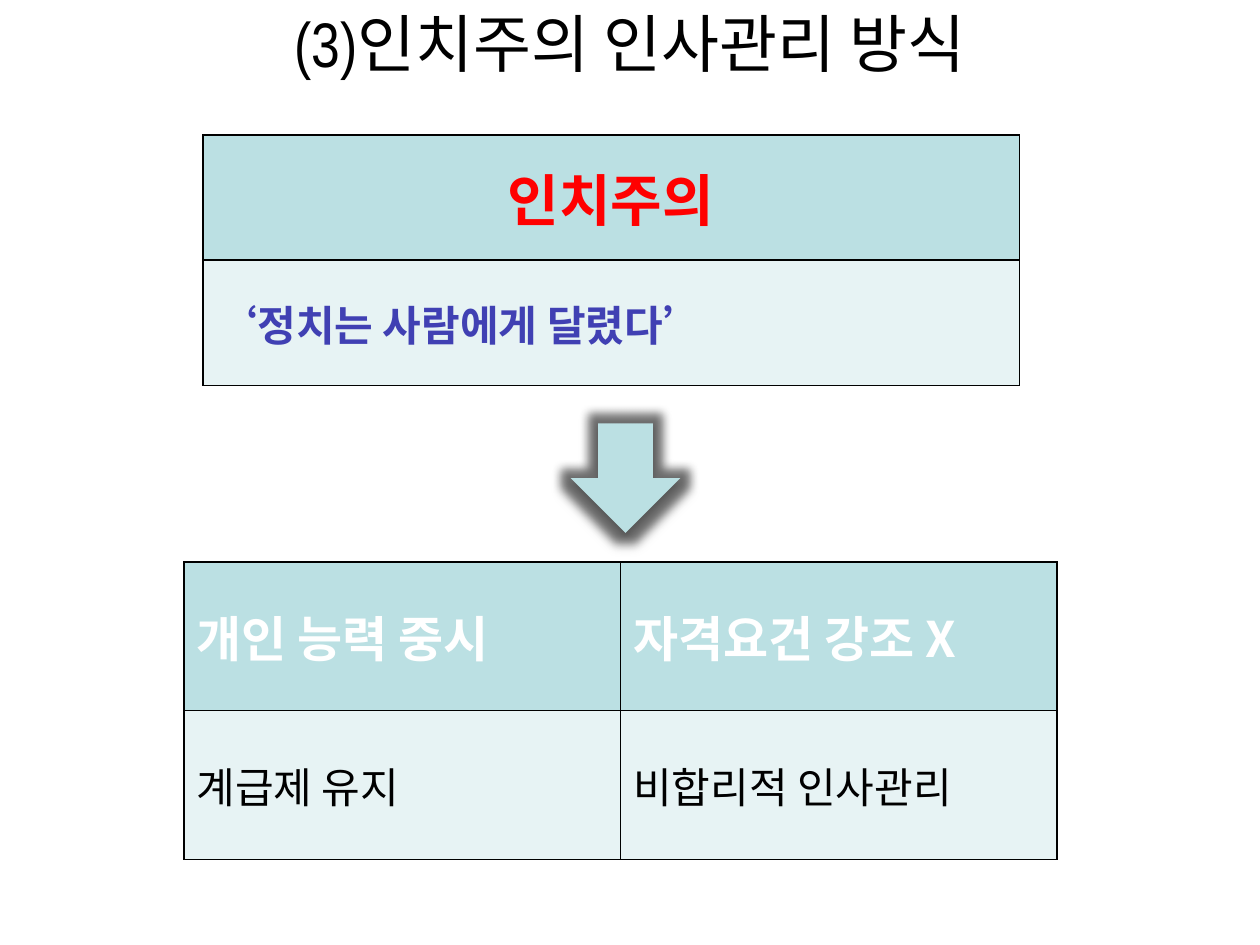
import pptx
import pptx.util
import pptx.dml.color
import pptx.enum.shapes
import pptx.enum.text
import pptx.oxml
import pptx.oxml.ns

Inches = pptx.util.Inches
Pt = pptx.util.Pt
qn = pptx.oxml.ns.qn
NS = pptx.oxml.ns.nsdecls("a")
ALIGN = pptx.enum.text.PP_ALIGN
MIDDLE = pptx.enum.text.MSO_ANCHOR.MIDDLE
SANS = "Noto Sans CJK KR"
DARK = "BBE0E3"
LIGHT = "E7F3F4"


def color(code):
    return pptx.dml.color.RGBColor.from_string(code)


def paint(shape, code):
    shape.fill.solid()
    shape.fill.fore_color.rgb = color(code)


def write(frame, text, size, code, bold=False, face=SANS, align=ALIGN.LEFT):
    para = frame.paragraphs[0]
    para.text = text
    para.alignment = align
    font = para.font
    font.size = Pt(size)
    font.bold = bold
    font.name = face
    font.color.rgb = color(code)
    east = pptx.oxml.parse_xml(f'<a:ea {NS} typeface="{SANS}"/>')
    para._p.pPr.find(qn("a:defRPr")).append(east)


def add_title(slide, text):
    box = slide.shapes.add_textbox(0, 0, Inches(10), Inches(0.67))
    box.text_frame.word_wrap = True
    box.text_frame.vertical_anchor = MIDDLE
    write(box.text_frame, text, 36, "000000", face="Arial Narrow", align=ALIGN.CENTER)


def add_border(cell):
    props = cell._tc.get_or_add_tcPr()
    for place, side in enumerate(("lnL", "lnR", "lnT", "lnB")):
        props.insert(place, pptx.oxml.parse_xml(
            f'<a:{side} {NS} w="12700"><a:solidFill><a:srgbClr val="000000"/>'
            f'</a:solidFill></a:{side}>'))


def add_grid(slide, left, top, width, height, rows):
    table = slide.shapes.add_table(
        len(rows), len(rows[0]), Inches(left), Inches(top),
        Inches(width), Inches(height)).table
    table.first_row = False
    table.horz_banding = False
    for row, (items, fill) in enumerate(zip(rows, (DARK, LIGHT))):
        for col, style in enumerate(items):
            cell = table.cell(row, col)
            cell.vertical_anchor = MIDDLE
            paint(cell, fill)
            add_border(cell)
            write(cell.text_frame, **style)


def add_arrow(slide, left, top, size):
    arrow = slide.shapes.add_shape(
        pptx.enum.shapes.MSO_SHAPE.DOWN_ARROW,
        Inches(left), Inches(top), Inches(size), Inches(size))
    paint(arrow, DARK)
    arrow.line.fill.background()
    arrow.shadow.inherit = False
    effects = arrow._element.spPr.find(qn("a:effectLst"))
    effects.append(pptx.oxml.parse_xml(
        f'<a:glow {NS} rad="139700"><a:srgbClr val="000000">'
        '<a:alpha val="50000"/></a:srgbClr></a:glow>'))
    effects.append(pptx.oxml.parse_xml(
        f'<a:outerShdw {NS} blurRad="44450" dist="27940" dir="5400000" algn="ctr">'
        '<a:srgbClr val="000000"><a:alpha val="32000"/></a:srgbClr></a:outerShdw>'))


def main():
    deck = pptx.Presentation()
    deck.slide_width = Inches(10)
    deck.slide_height = Inches(7.5)
    slide = deck.slides.add_slide(deck.slide_layouts[6])
    add_title(slide, "(3)인치주의 인사관리 방식")
    add_grid(slide, 1.61, 1.07, 6.48, 1.99, [
        [dict(text="인치주의", size=32, code="FF0000", bold=True, align=ALIGN.CENTER)],
        [dict(text="‘정치는 사람에게 달렸다’", size=24, code="4040B3", bold=True,
              face="Arial")],
    ])
    heads = ("개인 능력 중시", "자격요건 강조 X")
    notes = ("계급제 유지", "비합리적 인사관리")
    add_grid(slide, 1.46, 4.46, 6.93, 2.36, [
        [dict(text=text, size=28, code="FFFFFF", bold=True) for text in heads],
        [dict(text=text, size=24, code="000000") for text in notes],
    ])
    add_arrow(slide, 4.53, 3.36, 0.87)
    deck.save("out.pptx")


if __name__ == "__main__":
    main()
